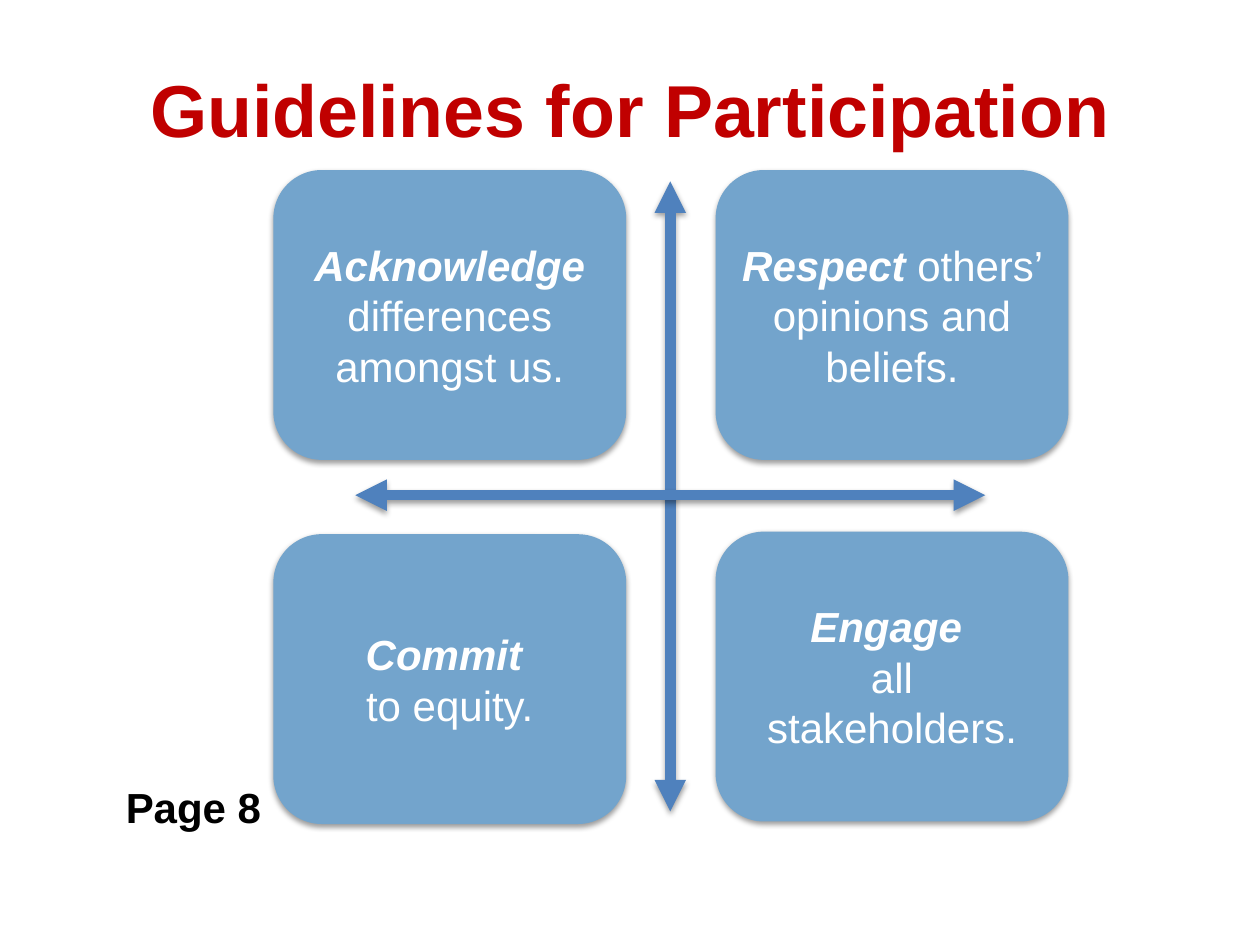
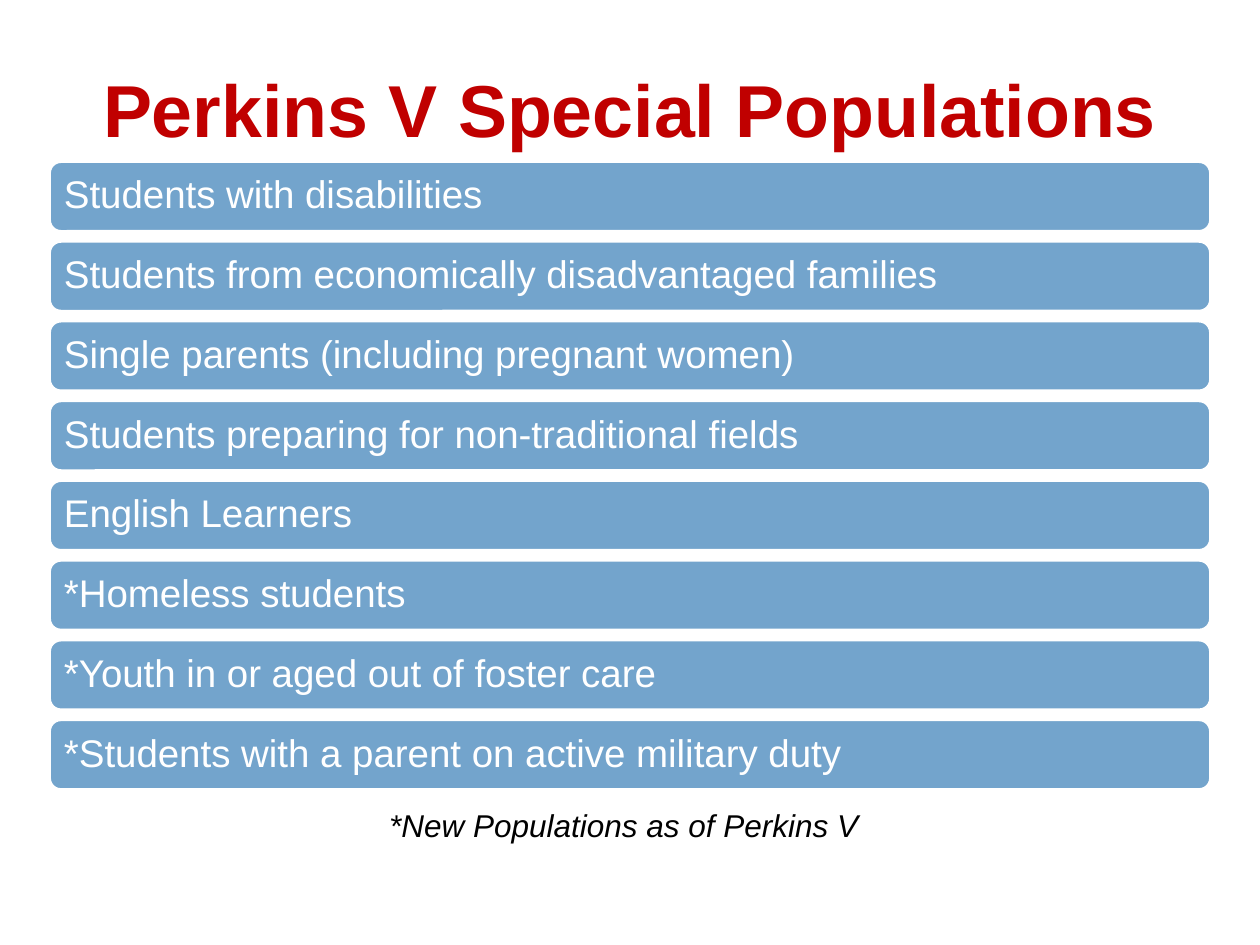
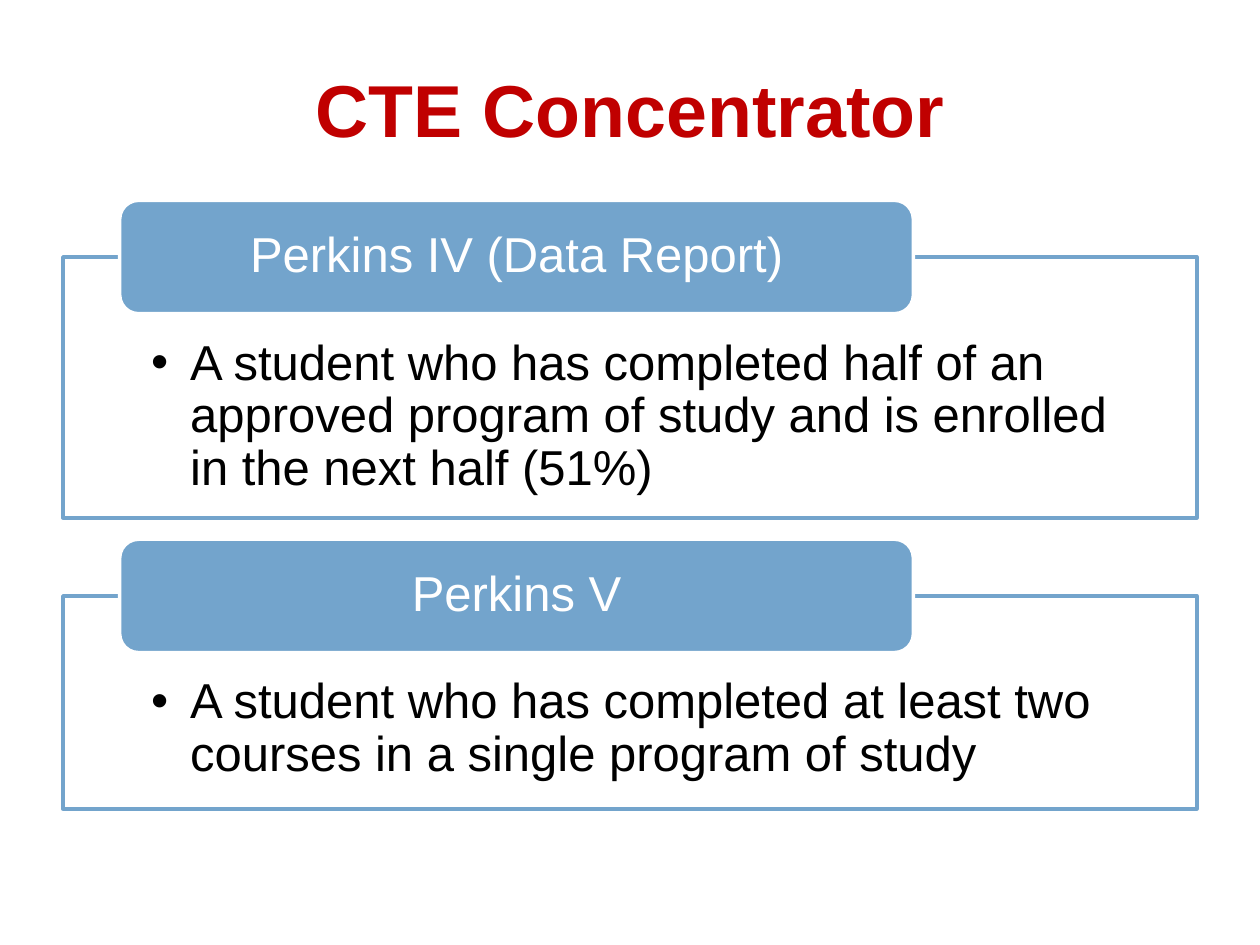
from lxml import etree
from pptx import Presentation
from pptx import util as u
from pptx.dml.color import RGBColor
from pptx.enum import shapes, text
from pptx.oxml.ns import qn

PX = 9144  # one px is a hundredth of an inch
FONT = "Arial"
RED = RGBColor(0xC0, 0x00, 0x00)
SKY = RGBColor(0x73, 0xA4, 0xCC)
BLUE = RGBColor(0x4F, 0x81, 0xBD)
WHITE = RGBColor(0xFF, 0xFF, 0xFF)
BLACK = RGBColor(0x00, 0x00, 0x00)
ROUND = shapes.MSO_SHAPE.ROUNDED_RECTANGLE
RECT = shapes.MSO_SHAPE.RECTANGLE
LEFT, MID = text.PP_ALIGN.LEFT, text.PP_ALIGN.CENTER
TOP, CORE, BASE = (text.MSO_ANCHOR.TOP, text.MSO_ANCHOR.MIDDLE,
                   text.MSO_ANCHOR.BOTTOM)


def emu(*px):
    return [round(n * PX) for n in px]


def shade(item):
    """Give a shape or connector the soft shadow below it."""
    props = item._element.spPr
    for old in props.findall(qn("a:effectLst")):
        props.remove(old)
    cast = etree.SubElement(etree.SubElement(props, qn("a:effectLst")),
                            qn("a:outerShdw"), blurRad="40000", dist="20000",
                            dir="5400000", rotWithShape="0")
    tint = etree.SubElement(cast, qn("a:srgbClr"), val=str(BLACK))
    etree.SubElement(tint, qn("a:alpha"), val="38000")


def write(item, paras, size, color, align=LEFT, anchor=TOP,
          pad=(10, 5, 10, 5), lead=None, bullet=False):
    """Fill a frame; each paragraph is a list of (words, style) runs."""
    frame = item.text_frame
    frame.word_wrap = True
    frame.vertical_anchor = anchor
    (frame.margin_left, frame.margin_top,
     frame.margin_right, frame.margin_bottom) = emu(*pad)
    for i, runs in enumerate(paras):
        para = frame.add_paragraph() if i else frame.paragraphs[0]
        para.alignment = align
        if lead:
            para.line_spacing = lead
        if bullet:
            props = para._p.get_or_add_pPr()
            hang = emu(31)[0]
            props.set("marL", str(hang))
            props.set("indent", str(-hang))
            etree.SubElement(props, qn("a:buFont"), typeface=FONT)
            etree.SubElement(props, qn("a:buChar"), char="•")
        for words, style in runs:
            run = para.add_run()
            run.text = words
            font = run.font
            font.name, font.size = FONT, u.Pt(size)
            font.bold, font.italic = "b" in style, "i" in style
            font.color.rgb = color


def label(slide, box, words, style, size, color=BLACK, **look):
    item = slide.shapes.add_textbox(*emu(*box))
    write(item, [[(words, style)]], size, color, **look)


def panel(slide, kind, box, fill, edge=None):
    item = slide.shapes.add_shape(kind, *emu(*box))
    item.shadow.inherit = False
    item.fill.solid()
    item.fill.fore_color.rgb = fill
    if edge is None:
        item.line.fill.background()
    else:
        item.line.color.rgb = edge
        item.line.width = u.Pt(2)
    return item


def page(deck, title):
    slide = deck.slides.add_slide(deck.slide_layouts[6])
    label(slide, (50, 50, 900, 71), title, "b", 42, RED,
          align=MID, anchor=BASE, pad=(0, 0, 0, 0))
    return slide


def arrow(slide, *ends):
    line = slide.shapes.add_connector(shapes.MSO_CONNECTOR.STRAIGHT,
                                      *emu(*ends))
    line.line.color.rgb = BLUE
    line.line.width = u.Pt(6)
    stroke = line.line._get_or_add_ln()
    for end in ("a:headEnd", "a:tailEnd"):
        etree.SubElement(stroke, qn(end), type="triangle")
    shade(line)


def rules(slide, box, tiles):
    """Four tiles in two columns, parted by a cross of arrows."""
    x, y, wide, high = box
    w, h = 280, 230
    for i, (paras, drop) in enumerate(tiles):
        left = x + i % 2 * (wide - w)
        top = y + i // 2 * (high - h) + drop
        tile = panel(slide, ROUND, (left, top, w, h), SKY)
        shade(tile)
        write(tile, paras, 24, WHITE, MID, CORE)
    midx, midy, reach = x + wide // 2, y + high // 2, 250
    arrow(slide, midx, midy - reach + 1, midx, midy + reach + 1)
    arrow(slide, midx + reach, midy, midx - reach, midy)


def bars(slide, box, names):
    """Rows of equal height spread evenly over the box."""
    x, y, w, high = box
    h = 56
    step = (high - h) / (len(names) - 1)
    for i, name in enumerate(names):
        bar = panel(slide, ROUND, (x, y + i * step, w, h), SKY, WHITE)
        write(bar, [[(name, "")]], 22, WHITE, anchor=CORE,
              pad=(9, 9, 9, 9), lead=0.9)


def card(slide, box, head, body):
    """A framed note whose heading tab straddles the top edge."""
    x, y, w, h = box
    tab = 90
    note = panel(slide, RECT, (x, y + tab // 2, w, h - tab // 2), WHITE, SKY)
    write(note, [[(body, "")]], 28, BLACK, pad=(70, 64, 70, 22),
          lead=0.9, bullet=True)
    cap = panel(slide, ROUND, (x + w // 20, y, w * 7 // 10, tab), SKY, WHITE)
    write(cap, [[(head, "")]], 28, WHITE, MID, CORE,
          pad=(24, 0, 24, 0), lead=0.9)


def main():
    deck = Presentation()
    deck.slide_width, deck.slide_height = emu(1000, 750)

    slide = page(deck, "Guidelines for Participation")
    rules(slide, (217, 135, 631, 517), [
        ([[("Acknowledge ", "bi"), ("differences amongst us.", "")]], 0),
        ([[("Respect", "bi"), (" others’ opinions and beliefs.", "")]], 0),
        ([[("Commit ", "bi")], [("to equity.", "")]], 2),
        ([[("Engage ", "bi")], [("all stakeholders.", "")]], 0),
    ])
    label(slide, (90, 615, 167, 50), "Page 8", "b", 24)

    slide = page(deck, "Perkins V Special Populations")
    bars(slide, (39, 128, 922, 499), [
        "Students with disabilities",
        "Students from economically disadvantaged families",
        "Single parents (including pregnant women)",
        "Students preparing for non-traditional fields",
        "English Learners",
        "*Homeless students",
        "*Youth in or aged out of foster care",
        "*Students with a parent on active military duty",
    ])
    label(slide, (299, 635, 402, 40), "*New Populations as of Perkins V",
          "i", 18)

    slide = page(deck, "CTE Concentrator")
    card(slide, (50, 159, 900, 252), "Perkins IV (Data Report)",
         "A student who has completed half of an approved program of study "
         "and is enrolled in the next half (51%)")
    card(slide, (50, 428, 900, 214), "Perkins V",
         "A student who has completed at least two courses in a single "
         "program of study")

    deck.save("out.pptx")


if __name__ == "__main__":
    main()
